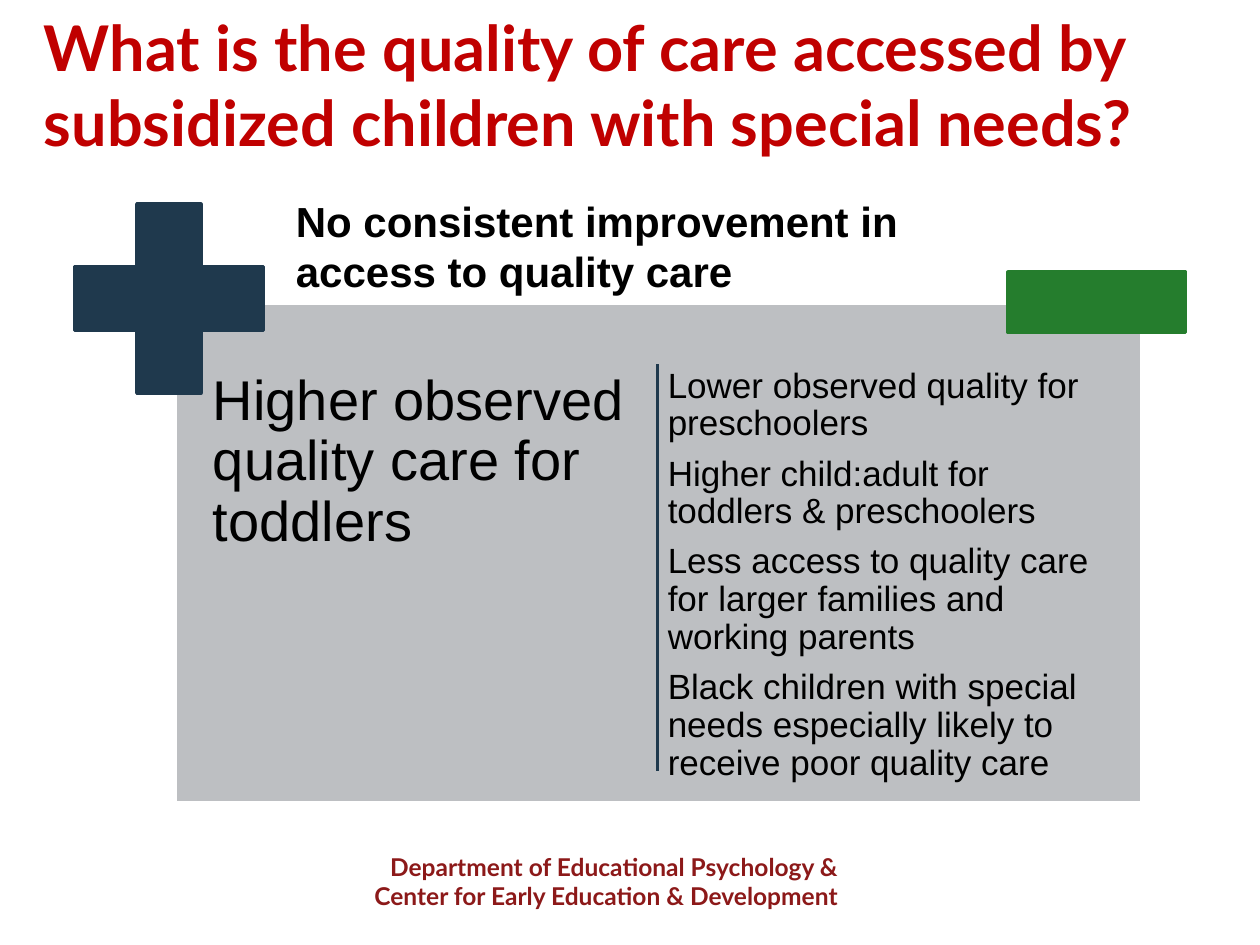
from lxml import etree
from pptx import Presentation
from pptx.dml.color import RGBColor
from pptx.enum.shapes import MSO_CONNECTOR, MSO_SHAPE
from pptx.enum.text import MSO_ANCHOR, PP_ALIGN
from pptx.oxml.ns import qn
from pptx.util import Inches, Pt

RED = RGBColor(0xC0, 0x00, 0x00)
MAROON = RGBColor(0x8C, 0x19, 0x19)
NAVY = RGBColor(0x1F, 0x39, 0x4D)
GREEN = RGBColor(0x25, 0x7D, 0x2D)
GREY = RGBColor(0xBD, 0xBF, 0xC2)
WHITE = RGBColor(0xFF, 0xFF, 0xFF)
BLACK = RGBColor(0x00, 0x00, 0x00)
LEFT, RIGHT = PP_ALIGN.LEFT, PP_ALIGN.RIGHT
TOP, MIDDLE = MSO_ANCHOR.TOP, MSO_ANCHOR.MIDDLE
RECTANGLE, CROSS = MSO_SHAPE.RECTANGLE, MSO_SHAPE.CROSS

TITLE = ["What is the quality of care accessed by subsidized children with special needs?"]
HEADING = ["No consistent improvement in access to quality care"]
POSITIVES = ["Higher observed quality care for toddlers"]
NEGATIVES = [
    "Lower observed quality for preschoolers",
    "Higher child:adult for toddlers & preschoolers",
    "Less access to quality care for larger families and working parents",
    "Black children with special needs especially likely to receive poor quality care",
]
FOOTER = [
    "Department of Educational Psychology &",
    "Center for Early Education & Development",
]

COLUMN_TOP, COLUMN_WIDTH, COLUMN_HEIGHT = 2.88, 3.56, 3.39
DIVIDER_X, DIVIDER_TOP, DIVIDER_BOTTOM = 5.22, 2.89, 6.12


def add_text(page, place, lines, size, color, font="Arial", bold=False,
             align=LEFT, anchor=TOP):
    box = page.shapes.add_textbox(*map(Inches, place))
    frame = box.text_frame
    frame.word_wrap = True
    frame.vertical_anchor = anchor
    frame.text = "\n".join(lines)
    for para in frame.paragraphs:
        para.alignment = align
        for span in para.runs:
            span.font.name = font
            span.font.size = Pt(size)
            span.font.bold = bold
            span.font.color.rgb = color
    return frame


def add_column(page, left, lines, size, inset):
    place = (left, COLUMN_TOP, COLUMN_WIDTH, COLUMN_HEIGHT)
    frame = add_text(page, place, lines, size, BLACK)
    frame.margin_left = frame.margin_right = Inches(inset)
    frame.margin_top = frame.margin_bottom = Inches(inset)
    for para in frame.paragraphs:
        para.line_spacing = 0.9
        para.space_after = Pt(0.35 * size)


def add_block(page, kind, place, fill, outline):
    shape = page.shapes.add_shape(kind, *map(Inches, place))
    shape.shadow.inherit = False
    shape.fill.solid()
    shape.fill.fore_color.rgb = fill
    shape.line.color.rgb = outline
    shape.line.width = Pt(2)
    return shape


def add_divider(page):
    line = page.shapes.add_connector(
        MSO_CONNECTOR.STRAIGHT, Inches(DIVIDER_X), Inches(DIVIDER_TOP),
        Inches(DIVIDER_X), Inches(DIVIDER_BOTTOM))
    line.line.color.rgb = NAVY
    line.line.width = Pt(2)
    etree.SubElement(line._element.spPr, qn("a:effectLst"))


def main():
    deck = Presentation()
    deck.slide_width, deck.slide_height = Inches(10), Inches(7.5)
    page = deck.slides.add_slide(deck.slide_layouts[6])

    add_text(page, (1.75, 6.71, 5, 0.57), FOOTER, 14, MAROON, "Lato", True, RIGHT)
    add_text(page, (0.25, 0.25, 9.5, 0.83), TITLE, 36, RED, "Lato", True, anchor=MIDDLE)

    add_block(page, RECTANGLE, (1.39, 2.41, 7.67, 3.96), GREY, WHITE)
    add_column(page, 1.62, POSITIVES, 32, 0.07)
    add_column(page, 5.26, NEGATIVES, 20, 0.04)
    plus = add_block(page, CROSS, (0.59, 1.62, 1.5, 1.5), NAVY, NAVY)
    plus.adjustments[0] = 0.33
    add_block(page, RECTANGLE, (8, 2.16, 1.41, 0.48), GREEN, GREEN)
    add_divider(page)

    add_text(page, (2.25, 1.5, 5.83, 1.31), HEADING, 24, BLACK, bold=True)
    deck.save("out.pptx")


if __name__ == "__main__":
    main()
